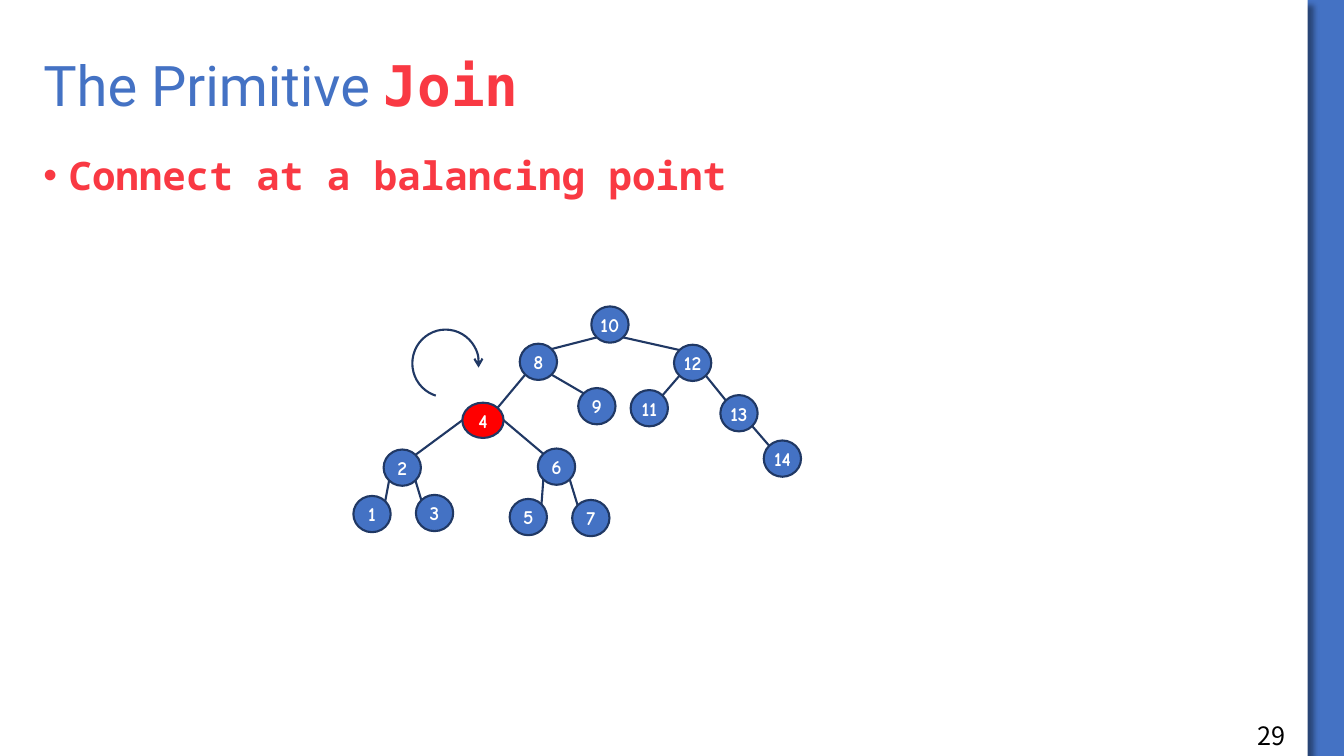
from math import sqrt

from lxml.etree import SubElement
from pptx import Presentation
from pptx.dml.color import RGBColor
from pptx.enum.shapes import MSO_CONNECTOR as Connector, MSO_SHAPE as Shape
from pptx.enum.text import MSO_ANCHOR as Anchor, MSO_AUTO_SIZE as AutoSize, PP_ALIGN as Align
from pptx.oxml.ns import qn
from pptx.util import Inches, Pt

WIDTH, HEIGHT = 13.33, 7.5
MARGIN, CONTENT_WIDTH = 0.33, 12.33
BLUE, NAVY, RED, CORAL = "4472C4", "203864", "FF0000", "F93943"
WHITE, BLACK = "FFFFFF", "000000"
NODE_SIZE, ROTATED_SIZE = (0.37, 0.36), (0.41, 0.35)
ROTATED = 4

# Node centres in inches from the tree's top left corner
CENTRES = {
    10: (2.55, 0.18), 8: (1.84, 0.55), 12: (3.37, 0.56),
    4: (1.29, 1.13), 9: (2.42, 0.99), 11: (2.94, 1.01), 13: (3.83, 1.06),
    2: (0.49, 1.6), 6: (2.02, 1.59), 14: (4.26, 1.51),
    1: (0.19, 2.06), 3: (0.81, 2.05), 5: (1.74, 2.09), 7: (2.36, 2.1),
}
# Parent: (left child, right child)
CHILDREN = {10: (8, 12), 8: (4, 9), 12: (11, 13), 13: (None, 14),
            4: (2, 6), 2: (1, 3), 6: (5, 7)}


def color(value):
    return RGBColor.from_string(value)


def place(shape, box):
    shape.left, shape.top, shape.width, shape.height = map(Inches, box)


def add_text(paragraph, text, size, font, fill, bold=False, align=Align.LEFT, spacing=None):
    paragraph.alignment = align
    paragraph.line_spacing = spacing
    run = paragraph.add_run()
    run.text = text
    run.font.size, run.font.name, run.font.bold = Pt(size), font, bold
    run.font.color.rgb = color(fill)


def outline(shape):
    shape.line.color.rgb = color(NAVY)
    shape.line.width = Pt(1.5)


def add_panel(slide, box):
    """White page over the blue background, with a soft shadow at its edge."""
    panel = slide.shapes.add_shape(Shape.RECTANGLE, *map(Inches, box))
    panel.fill.solid()
    panel.fill.fore_color.rgb = color(WHITE)
    panel.line.fill.background()
    panel.shadow.inherit = False
    effects = panel._element.spPr.find(qn("a:effectLst"))
    shadow = SubElement(effects, qn("a:outerShdw"), blurRad=str(Pt(4)), dist=str(Pt(6)),
                        dir="2700000", algn="tl", rotWithShape="0")
    shade = SubElement(shadow, qn("a:srgbClr"), val=BLACK)
    SubElement(shade, qn("a:alpha"), val="40000")
    slide.shapes._spTree.insert(2, panel._element)  # send to back


def add_title(slide, box):
    title = slide.shapes.title
    place(title, box)
    frame = title.text_frame
    frame.vertical_anchor, frame.auto_size = Anchor.MIDDLE, AutoSize.NONE
    paragraph = frame.paragraphs[0]
    add_text(paragraph, "The Primitive ", 40, "Roboto", BLUE, spacing=0.9)
    add_text(paragraph, "Join", 40, "DejaVu Sans Mono", CORAL, bold=True, spacing=0.9)


def add_body(slide, box):
    body = slide.placeholders[1]
    place(body, box)
    body.text_frame.auto_size = AutoSize.NONE
    paragraph = body.text_frame.paragraphs[0]
    add_text(paragraph, "Connect at a balancing point", 28, "Noto Sans Mono", CORAL,
             bold=True, spacing=0.9)
    paragraph.space_before = Pt(6)
    properties = paragraph._p.get_or_add_pPr()
    properties.set("marL", str(Inches(0.25)))
    properties.set("indent", str(-Inches(0.25)))
    SubElement(properties, qn("a:buFont"), typeface="Arial")
    SubElement(properties, qn("a:buChar"), char="•")


def add_page_number(slide, box):
    frame = slide.shapes.add_textbox(*map(Inches, box)).text_frame
    frame.word_wrap = True
    add_text(frame.paragraphs[0], "29", 18, "Noto Sans CJK SC", BLACK)


def node_size(key):
    return ROTATED_SIZE if key == ROTATED else NODE_SIZE


def add_node(slide, key, centre):
    width, height = node_size(key)
    box = centre[0] - width / 2, centre[1] - height / 2, width, height
    node = slide.shapes.add_shape(Shape.OVAL, *map(Inches, box))
    node.fill.solid()
    node.fill.fore_color.rgb = color(RED if key == ROTATED else BLUE)
    node.shadow.inherit = False
    outline(node)
    frame = node.text_frame
    frame.word_wrap, frame.vertical_anchor = False, Anchor.MIDDLE
    frame.margin_left = frame.margin_right = frame.margin_top = frame.margin_bottom = 0
    add_text(frame.paragraphs[0], str(key), 14, "Comic Neue", WHITE, bold=True,
             align=Align.CENTER)


def rim_point(key, centre, across, down):
    """Point on a node's rim: a diagonal, or the side when down is 0."""
    width, height = node_size(key)
    reach = 1 / sqrt(across ** 2 + down ** 2) / 2
    return centre[0] + across * width * reach, centre[1] + down * height * reach


def add_edge(slide, start, end):
    edge = slide.shapes.add_connector(Connector.STRAIGHT, *map(Inches, start + end))
    outline(edge)
    SubElement(edge._element.spPr, qn("a:effectLst"))


def add_tree(slide, left, top):
    centres = {key: (left + x, top + y) for key, (x, y) in CENTRES.items()}
    for parent, children in CHILDREN.items():
        for side, child in zip((-1, 1), children):
            if child is not None:
                down = 0 if parent == ROTATED else 1
                add_edge(slide, rim_point(parent, centres[parent], side, down),
                         rim_point(child, centres[child], -side, -1))
    for key, centre in centres.items():
        add_node(slide, key, centre)


def add_rotation_arrow(slide, box):
    arc = slide.shapes.add_shape(Shape.ARC, *map(Inches, box))
    arc.adjustments[0], arc.adjustments[1] = 64.14, 4.39
    arc.fill.background()
    arc.shadow.inherit = False
    outline(arc)
    SubElement(arc.line._get_or_add_ln(), qn("a:tailEnd"), type="arrow")


def main():
    presentation = Presentation()
    presentation.slide_width, presentation.slide_height = Inches(WIDTH), Inches(HEIGHT)
    slide = presentation.slides.add_slide(presentation.slide_layouts[1])
    slide.background.fill.solid()
    slide.background.fill.fore_color.rgb = color(BLUE)

    add_panel(slide, (0, 0, 12.97, HEIGHT))
    add_title(slide, (MARGIN, 0.5, CONTENT_WIDTH, 0.75))
    add_body(slide, (MARGIN, 1.5, CONTENT_WIDTH, 5.75))
    add_page_number(slide, (12.37, 7.1, 0.86, 0.4))
    add_tree(slide, 3.5, 3.04)
    add_rotation_arrow(slide, (4.09, 3.27, 0.66, 0.67))
    presentation.save("out.pptx")


if __name__ == "__main__":
    main()
